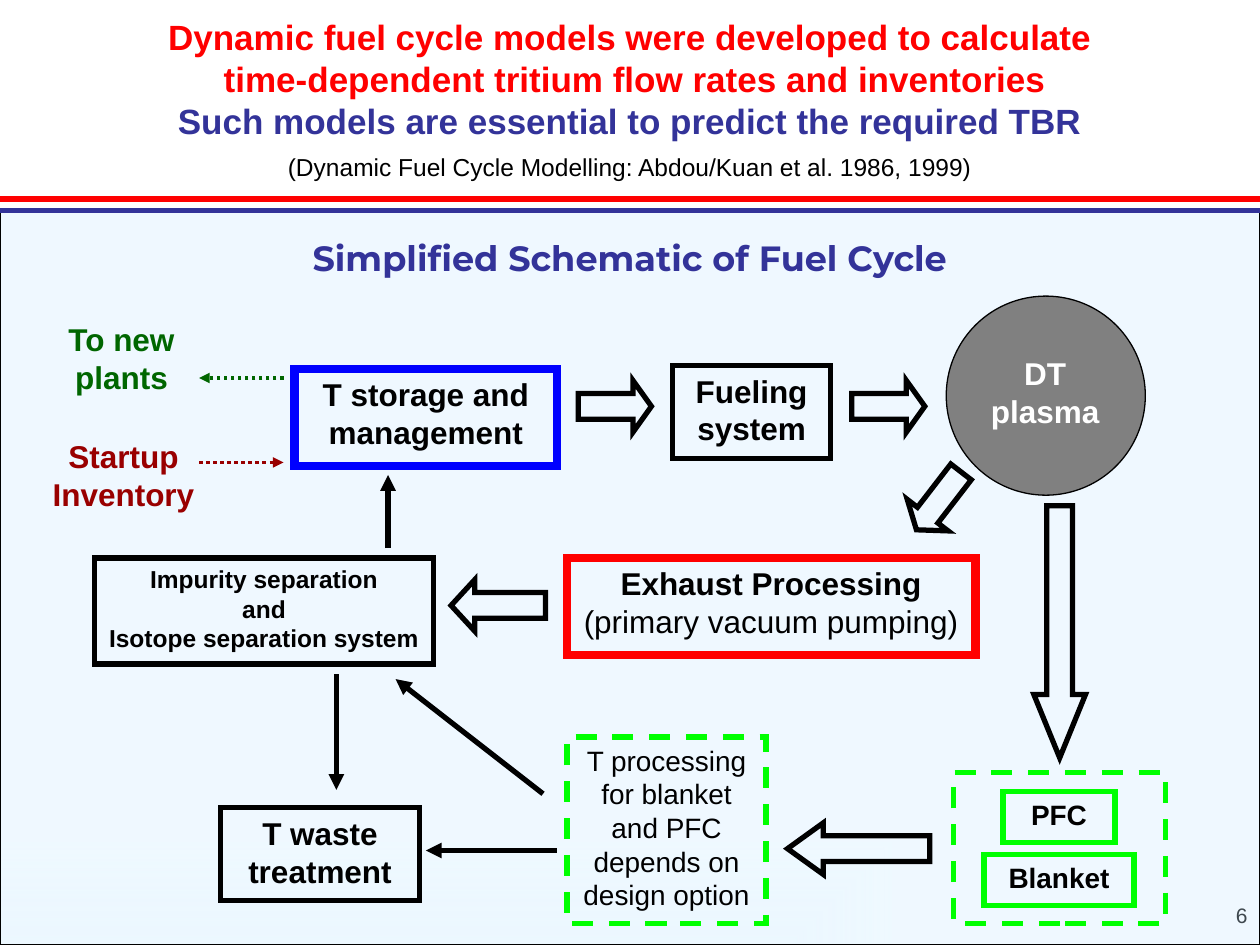
from lxml import etree
from pptx import Presentation
from pptx import util as u
from pptx.dml.color import RGBColor
from pptx.enum import dml, shapes, text
from pptx.oxml import parse_xml
from pptx.oxml.ns import qn

COLOURS = {
    "black": "000000", "white": "FFFFFF", "red": "FF0000", "navy": "333399",
    "blue": "0000FF", "lime": "00FF00", "green": "006600", "maroon": "990000",
    "grey": "808080", "sky": "CCECFF",
}
GRADIENT = """<a:gradFill xmlns:a="http://schemas.openxmlformats.org/drawingml/2006/main"
 rotWithShape="0"><a:gsLst><a:gs pos="0"><a:srgbClr val="{white}"/></a:gs>
 <a:gs pos="100000"><a:srgbClr val="{sky}"><a:alpha val="30000"/></a:srgbClr></a:gs></a:gsLst>
 <a:path path="rect"><a:fillToRect t="100000" r="100000"/></a:path></a:gradFill>"""
CENTRE = text.PP_ALIGN.CENTER
DASH = dml.MSO_LINE.DASH
DOTS = dml.MSO_LINE.ROUND_DOT


def rgb(name):
    return RGBColor.from_string(COLOURS[name])


def inches(*lengths):
    return [u.Inches(length) for length in lengths]


def write(frame, wording, size, colour="black", bold=False, font="Arial",
          align=CENTRE, wrap=True):
    frame.text = wording
    frame.word_wrap = wrap
    frame.auto_size = text.MSO_AUTO_SIZE.NONE
    frame.vertical_anchor = text.MSO_ANCHOR.TOP
    for paragraph in frame.paragraphs:
        paragraph.alignment = align
        for run in paragraph.runs:
            run.font.size = u.Pt(size)
            run.font.name = font
            run.font.bold = bold
            run.font.color.rgb = rgb(colour)


def label(slide, at, wording, size, colour="black", **style):
    write(slide.shapes.add_textbox(*inches(*at)).text_frame, wording, size, colour, **style)


def outline(line, colour, width, dash=None):
    line.color.rgb = rgb(colour)
    line.width = u.Pt(width)
    if dash:
        line.dash_style = dash


def outlined(slide, kind, at, colour="black", width=3, dash=None):
    """Unfilled preset shape with sharp corners."""
    shape = slide.shapes.add_shape(kind, *inches(*at))
    shape.shadow.inherit = False
    shape.fill.background()
    outline(shape.line, colour, width, dash)
    etree.SubElement(shape.line._get_or_add_ln(), qn("a:miter"), lim="800000")
    return shape


def box(slide, at, wording="", size=18, colour="black", width=3, dash=None,
        bold=True, wrap=True):
    frame = outlined(slide, shapes.MSO_SHAPE.RECTANGLE, at, colour, width, dash).text_frame
    if wording:
        write(frame, wording, size, bold=bold, wrap=wrap)
    return frame


def block_arrow(slide, left, top, length, head, rotation=0):
    arrow = outlined(slide, shapes.MSO_SHAPE.RIGHT_ARROW, (left, top, length, 0.41))
    arrow.adjustments[0] = 0.5
    arrow.adjustments[1] = head
    arrow.rotation = rotation


def line(slide, start, end, colour="black", width=3, dash=None, arrow=True):
    connector = slide.shapes.add_connector(
        shapes.MSO_CONNECTOR.STRAIGHT, *inches(*start, *end))
    outline(connector.line, colour, width, dash)
    if arrow:
        etree.SubElement(connector.line._get_or_add_ln(), qn("a:tailEnd"), type="triangle")
    etree.SubElement(connector._element.spPr, qn("a:effectLst"))


def add_heading(slide):
    title = slide.shapes.title
    title.left, title.top, title.width, title.height = inches(0, 0.07, 10, 1.1)
    write(title.text_frame,
          "Dynamic fuel cycle models were developed to calculate\v"
          " time-dependent tritium flow rates and inventories\v"
          "Such models are essential to predict the required TBR",
          20, "red", bold=True)
    title.text_frame.paragraphs[0].runs[-1].font.color.rgb = rgb("navy")
    label(slide, (0, 1.16, 10, 0.33),
          "(Dynamic Fuel Cycle Modelling: Abdou/Kuan et al. 1986, 1999)", 14)


def add_panel(slide):
    label(slide, (7.67, 7.11, 2.33, 0.52), "6", 12, align=text.PP_ALIGN.RIGHT)
    panel = outlined(slide, shapes.MSO_SHAPE.RECTANGLE, (0, 1.67, 10, 5.83), width=0.75)
    properties = panel._element.spPr
    properties.replace(properties.find(qn("a:noFill")),
                       parse_xml(GRADIENT.format(**COLOURS)))
    for y, colour in ((1.67, "navy"), (1.58, "red")):
        line(slide, (0, y), (10, y), colour, arrow=False)
    label(slide, (0, 1.83, 10, 0.43), "Simplified Schematic of Fuel Cycle",
          20, "navy", bold=True, font="Montserrat")


def add_stages(slide):
    label(slide, (0.33, 2.49, 1.27, 0.7), "To new plants", 18, "green", bold=True)
    label(slide, (0.27, 3.42, 1.42, 0.7), "Startup Inventory", 18, "maroon", bold=True)

    box(slide, (2.34, 2.93, 2.08, 0.77), "T storage and management", colour="blue", width=5)
    box(slide, (5.34, 2.9, 1.25, 0.74), "Fueling system")
    exhaust = box(slide, (4.5, 4.43, 3.24, 0.77),
                  "Exhaust Processing\n(primary vacuum pumping)",
                  colour="red", width=5, wrap=False)
    exhaust.paragraphs[1].runs[0].font.bold = False
    box(slide, (0.75, 4.43, 2.69, 0.84),
        "Impurity separation\vand\vIsotope separation system", 14, wrap=False)
    box(slide, (1.75, 6.41, 1.58, 0.74), "T waste treatment")
    box(slide, (4.5, 5.85, 1.58, 1.48),
        "T processing for blanket and PFC depends on design option",
        16, "lime", dash=DASH, bold=False)

    box(slide, (7.96, 6.28, 0.89, 0.41), "PFC", 16, "lime")
    box(slide, (7.81, 6.78, 1.19, 0.41), "Blanket", 16, "lime")
    box(slide, (7.57, 6.13, 1.68, 1.2), colour="lime", dash=DASH)

    plasma = outlined(slide, shapes.MSO_SHAPE.OVAL, (7.51, 2.35, 1.58, 1.58), width=0.75)
    plasma.fill.solid()
    plasma.fill.fore_color.rgb = rgb("grey")
    label(slide, (7.63, 2.76, 1.33, 0.7), "DT plasma", 18, "white", bold=True)


def add_flows(slide):
    for left in (4.59, 6.76):
        block_arrow(slide, left, 3.02, 0.58, 0.357)
    block_arrow(slide, 7.16, 3.77, 0.58, 0.357, 127.6)
    block_arrow(slide, 3.58, 4.6, 0.75, 0.46, 180)
    block_arrow(slide, 7.41, 4.81, 2, 1.226, 90)
    block_arrow(slide, 6.25, 6.53, 1.13, 0.694, 180)

    for start, end in (((2.67, 5.35), (2.67, 6.27)), ((4.42, 6.75), (3.38, 6.75)),
                       ((4.31, 6.3), (3.14, 5.39)), ((3.08, 4.35), (3.08, 3.77))):
        line(slide, start, end)
    line(slide, (1.58, 3.67), (2.25, 3.67), "maroon", 2, DOTS)
    line(slide, (2.25, 3), (1.58, 3), "green", 2, DOTS)


def main():
    deck = Presentation()
    deck.slide_width, deck.slide_height = inches(10, 7.5)
    slide = deck.slides.add_slide(deck.slide_layouts[5])
    add_heading(slide)
    add_panel(slide)
    add_stages(slide)
    add_flows(slide)
    deck.save("out.pptx")


if __name__ == "__main__":
    main()
